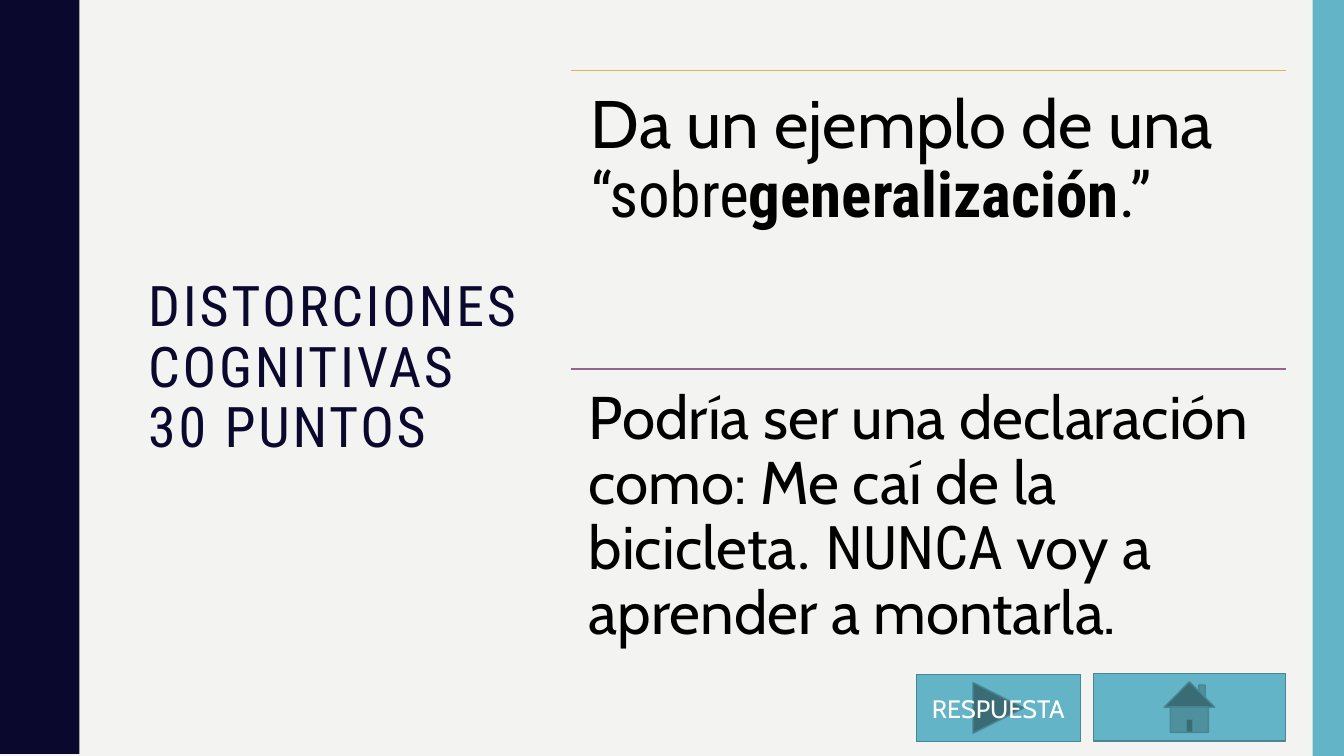
from lxml.etree import SubElement
from pptx import Presentation
from pptx.dml.color import RGBColor
from pptx.enum.shapes import MSO_CONNECTOR, MSO_SHAPE
from pptx.enum.text import MSO_ANCHOR, MSO_AUTO_SIZE, PP_ALIGN
from pptx.oxml.ns import qn
from pptx.util import Cm, Pt

WIDTH, HEIGHT = 33.87, 19.05
COLORS = {
    "background": "F3F3F2",
    "navy": "0B082E",
    "teal": "62B4C6",
    "teal_dark": "498592",
    "gold": "D3BA55",
    "plum": "96648A",
    "black": "000000",
    "white": "FFFFFF",
}
BODY_FONT, HEADING_FONT = "Cabin", "Roboto Condensed"

# Half a wave of the left border, as (x, y) in cm from trough to crest
WAVE_LENGTH, WAVE_COUNT = 3.81, 5
HALF_WAVE = [
    (1.98, 0), (1.98, 0.18), (2.01, 0.36), (2.03, 0.51), (2.06, 0.64),
    (2.11, 0.74), (2.16, 0.84), (2.21, 0.97), (2.26, 1.07), (2.31, 1.17),
    (2.36, 1.27), (2.41, 1.4), (2.44, 1.55), (2.46, 1.73), (2.46, 1.9),
]


def color(name):
    return RGBColor.from_string(COLORS[name])


class QuizSlide:
    """Holds the style and the slide being built; lengths are in cm."""

    def __init__(self, presentation):
        self.slide = presentation.slides.add_slide(presentation.slide_layouts[5])
        self.shapes = self.slide.shapes
        fill = self.slide.background.fill
        fill.solid()
        fill.fore_color.rgb = color("background")

    def paint(self, shape, fill, line=None):
        shape.shadow.inherit = False
        shape.fill.solid()
        shape.fill.fore_color.rgb = color(fill)
        if line:
            shape.line.color.rgb = color(line)
            shape.line.width = Pt(1)
        else:
            shape.line.fill.background()

    def wavy_border(self):
        wave = HALF_WAVE + [(x, WAVE_LENGTH - y) for x, y in reversed(HALF_WAVE)]
        edge = [(x, y + i * WAVE_LENGTH) for i in range(WAVE_COUNT) for x, y in wave]
        builder = self.shapes.build_freeform(0, 0, scale=Cm(1))
        builder.add_line_segments(edge + [(0, HEIGHT)], close=True)
        self.paint(builder.convert_to_shape(), "navy")

    def block(self, kind, left, top, width, height, line=None):
        shape = self.shapes.add_shape(kind, Cm(left), Cm(top), Cm(width), Cm(height))
        self.paint(shape, "teal", line)
        return shape

    def button(self, kind, left, top, width, height, label=""):
        shape = self.block(kind, left, top, width, height, "teal_dark")
        if label:
            frame = shape.text_frame
            frame.text = label
            frame.vertical_anchor = MSO_ANCHOR.MIDDLE
            paragraph = frame.paragraphs[0]
            paragraph.alignment = PP_ALIGN.CENTER
            self.style(paragraph.font, BODY_FONT, 18, "white")

    def style(self, font, name, size, font_color):
        font.name = name
        font.size = Pt(size)
        font.color.rgb = color(font_color)

    def title(self, lines, left, top, width, height):
        title = self.shapes.title
        title.left, title.top = Cm(left), Cm(top)
        title.width, title.height = Cm(width), Cm(height)
        frame = title.text_frame
        frame.word_wrap = True
        frame.auto_size = MSO_AUTO_SIZE.NONE
        frame.vertical_anchor = MSO_ANCHOR.MIDDLE
        paragraph = frame.paragraphs[0]
        paragraph.alignment = PP_ALIGN.LEFT
        paragraph.line_spacing = 0.9
        self.style(paragraph.font, HEADING_FONT, 40, "navy")
        for index, line in enumerate(lines):
            if index:
                paragraph.add_line_break()
            run = paragraph.add_run()
            run.text = line
            run.font._element.set("spc", "200")

    def rule(self, left, top, width, line_color):
        connector = self.shapes.add_connector(
            MSO_CONNECTOR.STRAIGHT, Cm(left), Cm(top), Cm(left + width), Cm(top))
        connector.line.color.rgb = color(line_color)
        connector.line.width = Pt(1)
        SubElement(connector._element.spPr, qn("a:effectLst"))

    def ruled_text(self, top, line_color, inset, runs):
        """Text under a rule; each run is (text, font, size, bold)."""
        left, width, height = 14.38, 18.03, 7.52
        self.rule(left, top, width, line_color)
        box = self.shapes.add_textbox(Cm(left), Cm(top), Cm(width), Cm(height))
        frame = box.text_frame
        frame.word_wrap = True
        frame.margin_left = frame.margin_right = Cm(inset)
        frame.margin_top = frame.margin_bottom = Cm(inset)
        paragraph = frame.paragraphs[0]
        paragraph.line_spacing = 0.9
        for text, font, size, bold in runs:
            run = paragraph.add_run()
            run.text = text
            run.font.bold = bold
            self.style(run.font, font, size, "black")


def main():
    presentation = Presentation()
    presentation.slide_width, presentation.slide_height = Cm(WIDTH), Cm(HEIGHT)

    quiz = QuizSlide(presentation)
    quiz.wavy_border()
    quiz.block(MSO_SHAPE.RECTANGLE, 33.08, 0, 0.79, HEIGHT)
    quiz.button(MSO_SHAPE.ACTION_BUTTON_HOME, 27.56, 16.97, 4.83, 1.7)
    quiz.button(MSO_SHAPE.ACTION_BUTTON_FORWARD_OR_NEXT, 23.09, 16.99, 4.14, 1.7,
                "RESPUESTA")
    quiz.title(["DISTORCIONES COGNITIVAS", "30 PUNTOS"], 3.48, 1.8, 9.98, 15.01)
    quiz.ruled_text(1.78, "gold", 0.51, [
        ("Da un ejemplo de una ", BODY_FONT, 48, False),
        ("“sobre", HEADING_FONT, 45, False),
        ("generalización", HEADING_FONT, 45, True),
        (".”", HEADING_FONT, 45, False),
    ])
    quiz.ruled_text(9.3, "plum", 0.46, [
        ("Podría ser una declaración como: Me caí de la bicicleta", BODY_FONT, 43, False),
        (". NUNCA ", HEADING_FONT, 43, False),
        ("voy a aprender a montarla.", BODY_FONT, 43, False),
    ])
    presentation.save("out.pptx")


if __name__ == "__main__":
    main()
